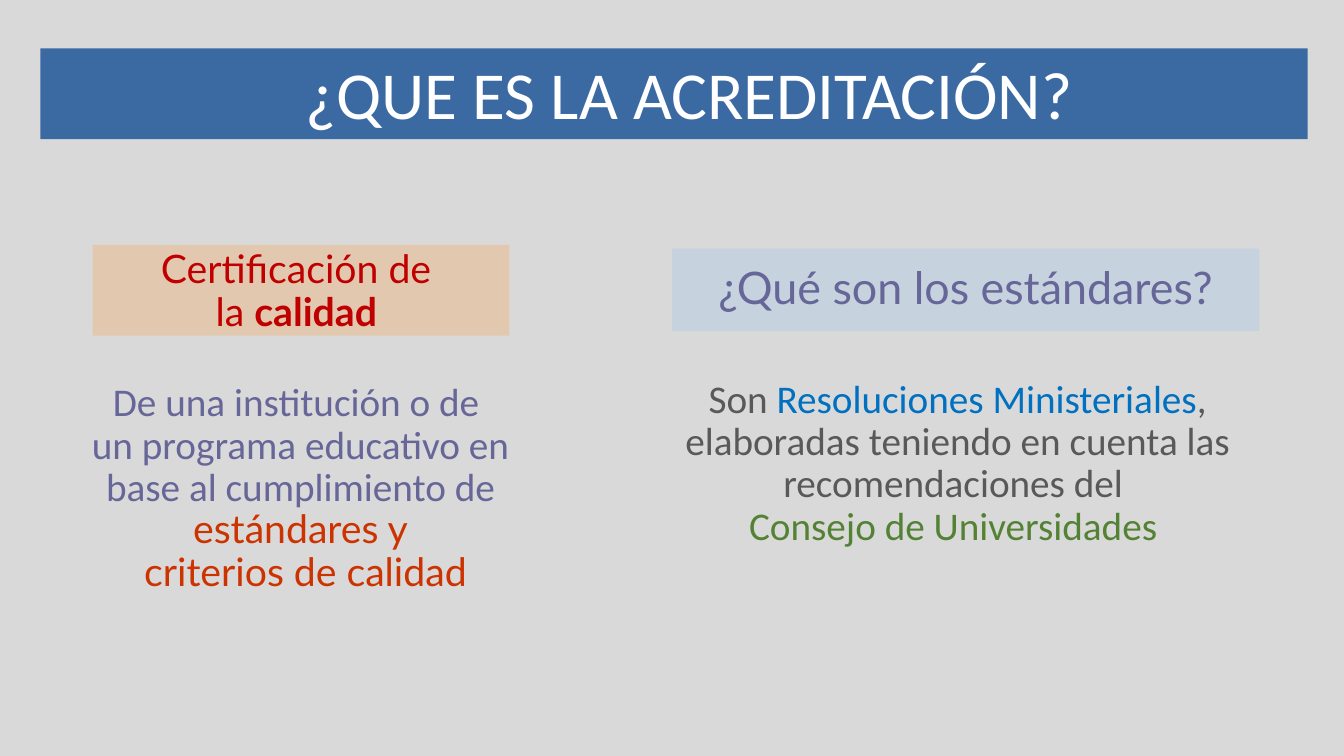
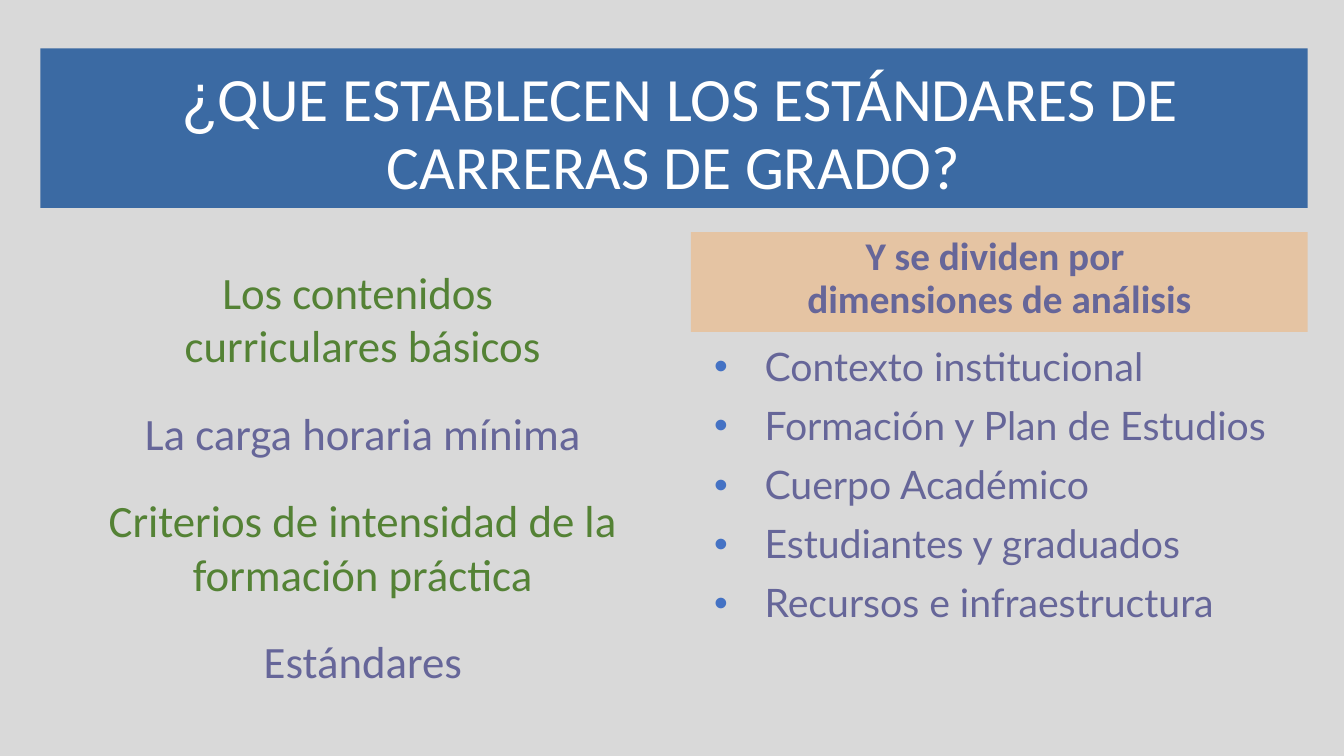
from dataclasses import dataclass

from lxml import etree
from pptx import Presentation
from pptx.dml.color import RGBColor
from pptx.enum.shapes import MSO_SHAPE
from pptx.enum.text import MSO_ANCHOR, PP_ALIGN
from pptx.oxml.ns import qn
from pptx.util import Inches, Pt

RECTANGLE = MSO_SHAPE.RECTANGLE
TOP, MIDDLE, BOTTOM = MSO_ANCHOR.TOP, MSO_ANCHOR.MIDDLE, MSO_ANCHOR.BOTTOM
LEFT, CENTER = PP_ALIGN.LEFT, PP_ALIGN.CENTER

COLORS = {
    "background": "D9D9D9",
    "band": "3B6AA3",
    "white": "FFFFFF",
    "violet": "666699",
    "green": "548235",
    "gray": "595959",
    "blue": "0070C0",
    "red": "C00000",
    "vermilion": "CC3300",
    "orange": "FF9933",
    "sky": "9DC3E6",
    "bullet": "4472C4",
}


@dataclass
class Span:
    text: str
    color: str = ""
    font: str = ""
    size: float = 0
    bold: bool = False


@dataclass
class TextStyle:
    size: float = 28
    font: str = "Calibri"
    color: str = "violet"
    bold: bool = False
    align: int = CENTER
    spacing: float = 0.9
    before: float = 0
    after: float = 12
    bullet: str = ""


class Deck:
    def __init__(self):
        self.deck = Presentation()
        self.deck.slide_width = Inches(13.33)
        self.deck.slide_height = Inches(7.5)
        self.page = None

    def new_page(self):
        self.page = self.deck.slides.add_slide(self.deck.slide_layouts[6])
        fill = self.page.background.fill
        fill.solid()
        fill.fore_color.rgb = RGBColor.from_string(COLORS["background"])

    def place(self, left, top, width, height):
        across, down = self.deck.slide_width / 100, self.deck.slide_height / 100
        return [int(value) for value in (left * across, top * down, width * across, height * down)]

    def panel(self, area, color, paragraphs, style, opacity=100, anchor=TOP):
        box = self.page.shapes.add_shape(RECTANGLE, *self.place(*area))
        box.shadow.inherit = False
        box.line.fill.background()
        box.fill.solid()
        box.fill.fore_color.rgb = RGBColor.from_string(COLORS[color])
        if opacity < 100:
            tint = box._element.spPr.find(qn("a:solidFill"))[0]
            etree.SubElement(tint, qn("a:alpha")).set("val", str(opacity * 1000))
        self.add_paragraphs(box.text_frame, paragraphs, style, anchor)
        return box

    def text(self, area, paragraphs, style):
        box = self.page.shapes.add_textbox(*self.place(*area))
        self.add_paragraphs(box.text_frame, paragraphs, style, TOP)

    def title(self, height, spans, size, indent=0.1):
        style = TextStyle(size=size, color="white", after=0)
        band = self.panel((3, 6.4, 94.3, height), "band", [spans], style, anchor=BOTTOM)
        band.text_frame.margin_left = Inches(indent)

    def add_paragraphs(self, frame, paragraphs, style, anchor):
        frame.word_wrap = True
        frame.vertical_anchor = anchor
        for index, spans in enumerate(paragraphs):
            para = frame.add_paragraph() if index else frame.paragraphs[0]
            if style.bullet:
                self.add_bullet(para, style.bullet)
            para.alignment = style.align
            para.line_spacing = style.spacing
            para.space_before = Pt(style.before)
            para.space_after = Pt(style.after)
            para.font.size = Pt(style.size)
            para.font.name = style.font
            para.font.bold = style.bold
            para.font.color.rgb = RGBColor.from_string(COLORS[style.color])
            for span in spans:
                self.add_span(para, span)

    def add_span(self, para, span):
        for index, line in enumerate(span.text.split("\n")):
            if index:
                para.add_line_break()
            if not line:
                continue
            run = para.add_run()
            run.text = line
            if span.color:
                run.font.color.rgb = RGBColor.from_string(COLORS[span.color])
            if span.font:
                run.font.name = span.font
            if span.size:
                run.font.size = Pt(span.size)
            if span.bold:
                run.font.bold = True

    def add_bullet(self, para, mark):
        properties = para._p.get_or_add_pPr()
        properties.set("marL", str(Inches(0.5)))
        properties.set("indent", str(-Inches(0.5)))
        tint = etree.SubElement(properties, qn("a:buClr"))
        etree.SubElement(tint, qn("a:srgbClr")).set("val", COLORS["bullet"])
        etree.SubElement(properties, qn("a:buFont")).set("typeface", "Arial")
        etree.SubElement(properties, qn("a:buChar")).set("char", mark)


def accreditation_page(deck):
    deck.new_page()
    deck.title(12, [Span("¿QUE ES LA ACREDITACIÓN?")], 48, indent=0.4)
    deck.panel(
        (6.9, 32.4, 31, 12),
        "orange",
        [[Span("Certificación de \nla "), Span("calidad ", bold=True)]],
        TextStyle(font="Lato", color="red"),
        opacity=25,
    )
    deck.text(
        (5.33, 50, 34.05, 35.3),
        [[
            Span("De una institución o de \nun programa educativo en base al cumplimiento de "),
            Span("estándares y\n criterios de calidad", "vermilion", "Lato"),
        ]],
        TextStyle(),
    )
    deck.panel(
        (50, 32.9, 43.7, 10.9),
        "sky",
        [[Span("¿Qué son los estándares?")]],
        TextStyle(size=32, font="Lato"),
        opacity=31,
        anchor=MIDDLE,
    )
    deck.text(
        (49.4, 49.5, 43.7, 26),
        [[
            Span("Son "),
            Span("Resoluciones Ministeriales", "blue"),
            Span(", elaboradas teniendo en cuenta las recomendaciones del \n"),
            Span("Consejo de Universidades ", "green"),
        ]],
        TextStyle(color="gray"),
    )


def standards_page(deck):
    deck.new_page()
    deck.title(
        21.1,
        [
            Span(" ¿", font="Manrope", size=48),
            Span("QUE ESTABLECEN LOS ESTÁNDARES DE CARRERAS DE GRADO?"),
        ],
        44,
    )
    contents = [
        "Los contenidos \ncurriculares básicos",
        "La carga horaria mínima",
        "Criterios de intensidad de la formación práctica",
        "Estándares",
    ]
    deck.text(
        (4.05, 34.3, 45.9, 58.3),
        [[Span(item, ("green", "violet")[index % 2])] for index, item in enumerate(contents)],
        TextStyle(size=32, spacing=1.0, before=12),
    )
    deck.panel(
        (51.4, 30.7, 45.9, 13.2),
        "orange",
        [[Span("Y se dividen por \ndimensiones de análisis")]],
        TextStyle(bold=True),
        opacity=32,
    )
    dimensions = [
        "Contexto institucional",
        "Formación y Plan de Estudios",
        "Cuerpo Académico",
        "Estudiantes y graduados",
        "Recursos e infraestructura",
    ]
    deck.text(
        (52.4, 45.3, 43.1, 42.7),
        [[Span(item)] for item in dimensions],
        TextStyle(font="Lato", align=LEFT, bullet="•"),
    )


def main():
    deck = Deck()
    accreditation_page(deck)
    standards_page(deck)
    deck.deck.save("out.pptx")


if __name__ == "__main__":
    main()
